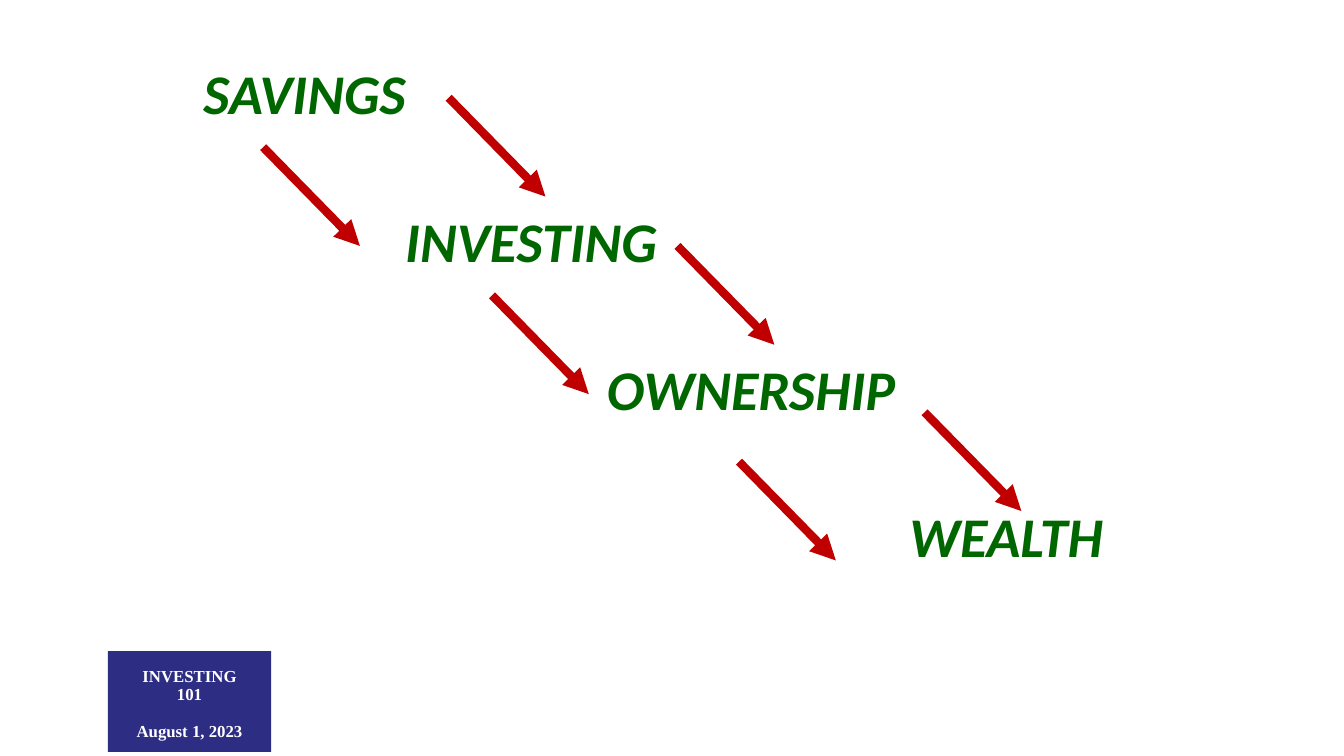
import pptx
import pptx.util
import pptx.dml.color
import pptx.enum.shapes
import pptx.enum.text
import pptx.oxml
import pptx.oxml.ns

Inches, Pt = pptx.util.Inches, pptx.util.Pt
RGBColor = pptx.dml.color.RGBColor
GREEN = RGBColor(0x00, 0x66, 0x00)
RED = RGBColor(0xC0, 0x00, 0x00)
NAVY = RGBColor(0x2D, 0x2D, 0x83)
WHITE = RGBColor(0xFF, 0xFF, 0xFF)

# Each step and its indent in columns of one inch
STEPS = [("SAVINGS", 1), ("INVESTING", 3), ("OWNERSHIP", 5), ("WEALTH", 8)]
# Start of the lower arrow of each pair, from the corner of the steps box
PAIRS = [(1.69, 0.85), (3.96, 2.32), (6.41, 3.97)]
SHIFT = (1.84, -0.49)  # from lower to upper arrow
RUN, DROP = 0.96, 0.98


def style(para, text, font, size, color):
    para.text = text
    para.line_spacing = 0.9
    para.font.name = font
    para.font.size = Pt(size)
    para.font.bold = True
    para.font.color.rgb = color


def add_badge(slide, left, top, width, height):
    badge = slide.shapes.add_shape(
        pptx.enum.shapes.MSO_SHAPE.RECTANGLE,
        Inches(left), Inches(top), Inches(width), Inches(height))
    badge.shadow.inherit = False
    badge.fill.solid()
    badge.fill.fore_color.rgb = NAVY
    badge.line.fill.background()
    frame = badge.text_frame
    frame.word_wrap = True
    frame.margin_top = Inches(0.11)
    frame.vertical_anchor = pptx.enum.text.MSO_ANCHOR.MIDDLE
    for i, text in enumerate(["INVESTING", "101", "August 1, 2023"]):
        para = frame.add_paragraph() if i else frame.paragraphs[0]
        style(para, text, "Times New Roman", 12, WHITE)
        para.alignment = pptx.enum.text.PP_ALIGN.CENTER
    para.space_before = Pt(13)  # gap above the date


def add_steps(slide, left, top, width, height):
    box = slide.shapes.add_textbox(
        Inches(left), Inches(top), Inches(width), Inches(height))
    frame = box.text_frame
    frame.word_wrap = True
    for i, (text, column) in enumerate(STEPS):
        para = frame.add_paragraph() if i else frame.paragraphs[0]
        props = para._p.get_or_add_pPr()
        props.set("marL", str(Inches(column)))
        props.set("indent", "0")
        style(para, text, "Calibri", 40, GREEN)
        para.font.italic = True
        if i:
            para.space_before = Pt(62.3)


def add_arrow(slide, x, y):
    arrow = slide.shapes.add_connector(
        pptx.enum.shapes.MSO_CONNECTOR.STRAIGHT,
        Inches(x), Inches(y), Inches(x + RUN), Inches(y + DROP))
    arrow.line.color.rgb = RED
    arrow.line.width = Pt(6)
    space = pptx.oxml.ns.nsdecls("a")
    arrow.line._get_or_add_ln().append(
        pptx.oxml.parse_xml(f'<a:tailEnd {space} type="triangle"/>'))
    arrow._element.spPr.append(
        pptx.oxml.parse_xml(f"<a:effectLst {space}/>"))


def add_pairs(slide, left, top):
    for x, y in PAIRS:
        for k in range(2):
            add_arrow(slide, left + x + k * SHIFT[0], top + y + k * SHIFT[1])


def main():
    deck = pptx.Presentation()
    deck.slide_width, deck.slide_height = Inches(13.33), Inches(7.5)
    slide = deck.slides.add_slide(deck.slide_layouts[6])
    # Badge at the foot
    add_badge(slide, 1.07, 6.46, 1.62, 1)
    # Steps and the arrows between them
    add_steps(slide, 0.92, 0.61, 11.5, 5.3)
    add_pairs(slide, 0.92, 0.61)
    deck.save("out.pptx")


if __name__ == "__main__":
    main()
